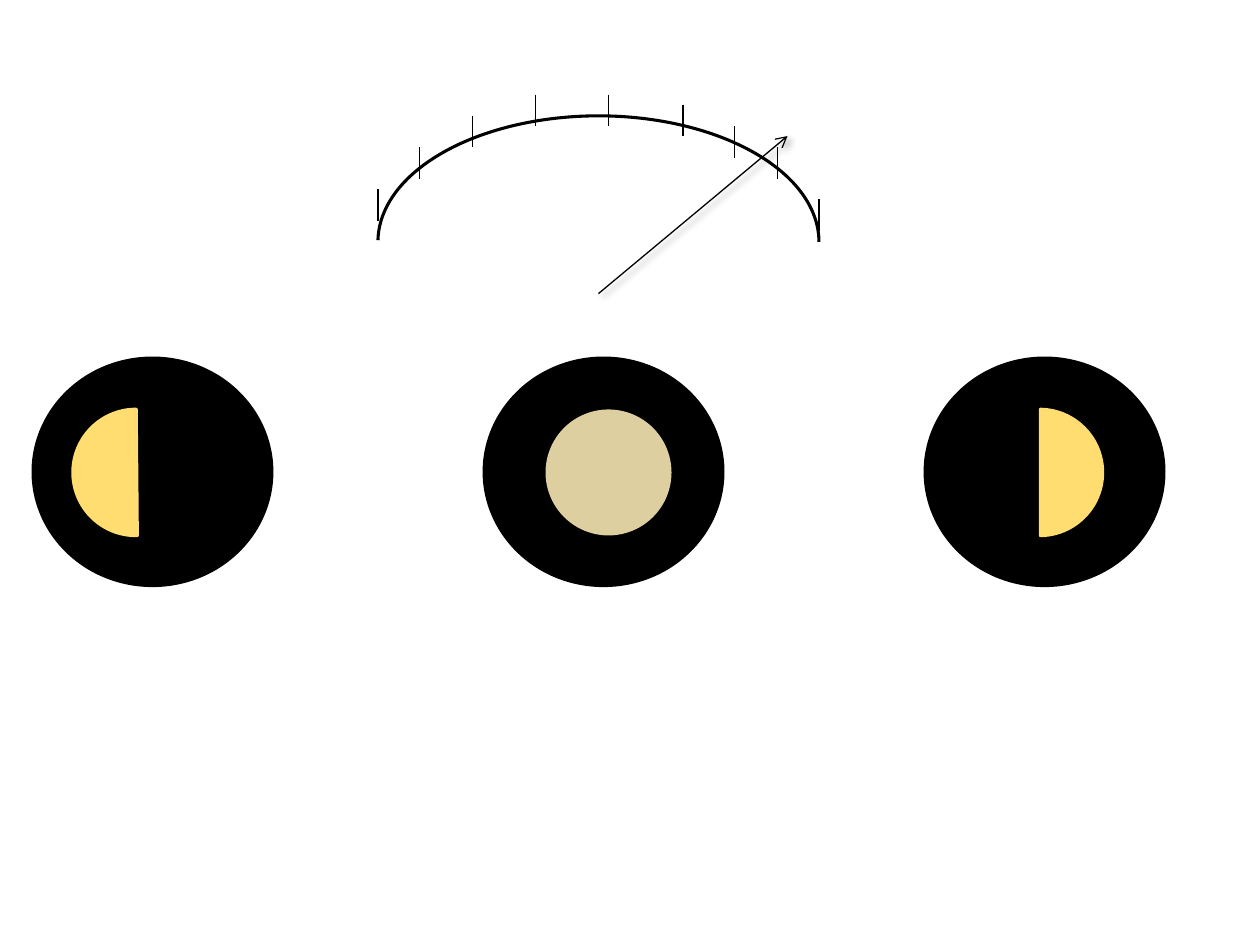
from lxml.etree import SubElement
from pptx import Presentation
from pptx.dml.color import RGBColor
from pptx.enum.shapes import MSO_CONNECTOR, MSO_SHAPE
from pptx.oxml.ns import qn
from pptx.util import Inches, Pt

COLORS = {"black": "000000", "moon": "FFDD71", "pale_moon": "FFEEB9"}


def add_shape(kind, left, top, width, height, fill=None, line=None,
              line_width=1, angles=()):
    """Add a preset shape; angles are its start and end in degrees."""
    sp = slide.shapes.add_shape(kind, Inches(left), Inches(top),
                                Inches(width), Inches(height))
    sp.shadow.inherit = False
    for i, angle in enumerate(angles):
        sp.adjustments[i] = angle * 0.6  # 60000ths of a degree over 100000
    if fill:
        sp.fill.solid()
        sp.fill.fore_color.rgb = RGBColor.from_string(COLORS[fill])
    else:
        sp.fill.background()
    if line:
        sp.line.color.rgb = RGBColor.from_string(COLORS[line])
        sp.line.width = Pt(line_width)
    else:
        sp.line.fill.background()
    return sp


def add_line(x1, y1, x2, y2):
    """Add a thin black line and return it with its empty effect list."""
    line = slide.shapes.add_connector(MSO_CONNECTOR.STRAIGHT, Inches(x1),
                                      Inches(y1), Inches(x2), Inches(y2))
    line.line.color.rgb = RGBColor.from_string(COLORS["black"])
    line.line.width = Pt(0.75)
    effects = SubElement(line._element.spPr, qn("a:effectLst"))
    return line, effects


prs = Presentation()
prs.slide_width, prs.slide_height = Inches(10), Inches(7.5)
slide = prs.slides.add_slide(prs.slide_layouts[6])

# Night sky discs
for left in (0.25, 3.83, 7.33):
    add_shape(MSO_SHAPE.OVAL, left, 2.83, 1.92, 1.83, fill="black")

# Half moons, then the full moon
for left, angles in ((0.58, (89, 270)), (7.75, (271, 88.9))):
    add_shape(MSO_SHAPE.CHORD, left, 3.25, 1, 1, "moon", "moon", 2, angles)
full_moon = add_shape(MSO_SHAPE.CHORD, 4.33, 3.25, 1, 1, "pale_moon",
                      angles=(271, 268.1))
color = full_moon._element.spPr.find(qn("a:solidFill"))[0]
SubElement(color, qn("a:alpha"), val="87000")

# Dial with its tick marks
add_shape(MSO_SHAPE.ARC, 3, 0.92, 3.5, 2, line="black", line_width=1.75,
          angles=(180.43, 0))
ticks = [(3, 1.5), (3.33, 1.17), (3.75, 0.92), (4.25, 0.75), (4.83, 0.75),
         (5.42, 0.83), (5.83, 1), (6.17, 1.17), (6.5, 1.58)]
for x, top in ticks:
    add_line(x, top, x, top + 0.25)

# Pointer with an arrowhead and a soft shadow
pointer, effects = add_line(4.75, 2.33, 6.25, 1.08)
SubElement(pointer.line._get_or_add_ln(), qn("a:tailEnd"), type="arrow")
shadow = SubElement(effects, qn("a:outerShdw"), blurRad=str(Pt(4)),
                    dist=str(Pt(3)), dir="2700000", algn="tl",
                    rotWithShape="0")
shadow_color = SubElement(shadow, qn("a:srgbClr"), val=COLORS["black"])
SubElement(shadow_color, qn("a:alpha"), val="40000")

prs.save("out.pptx")
